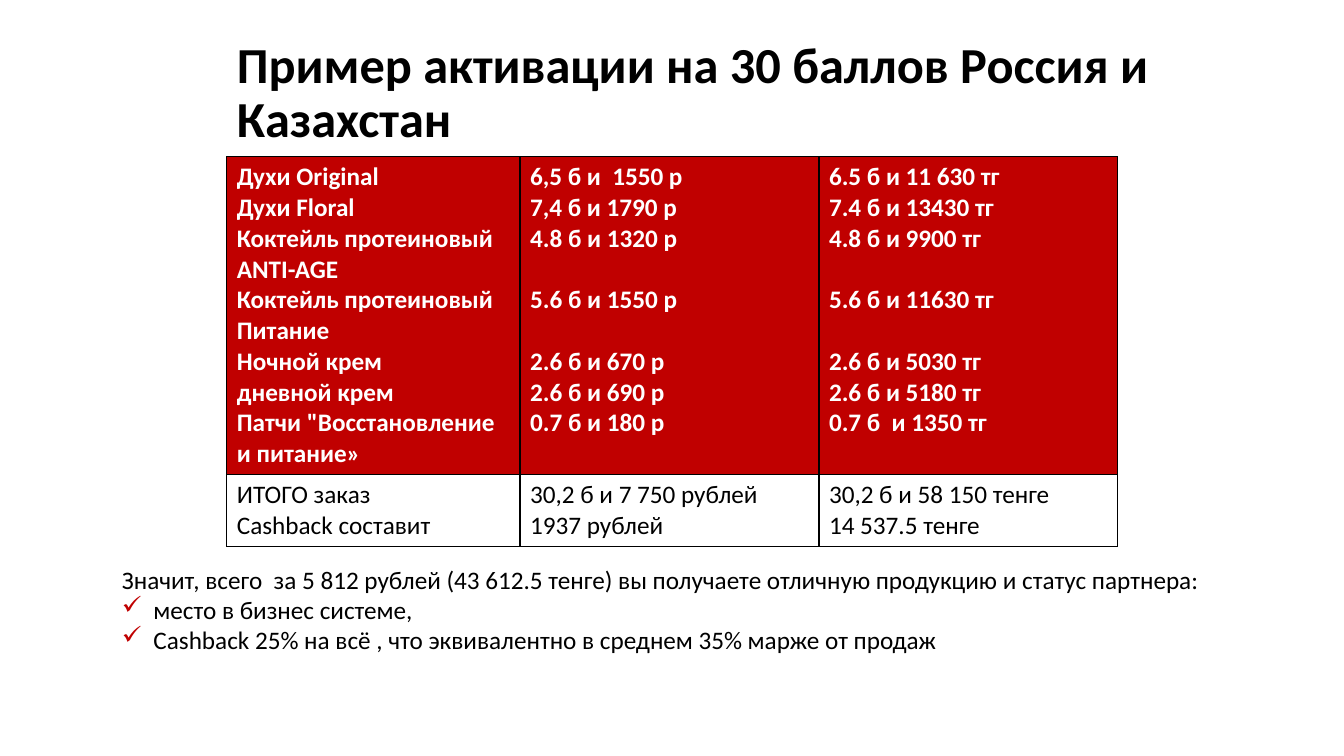
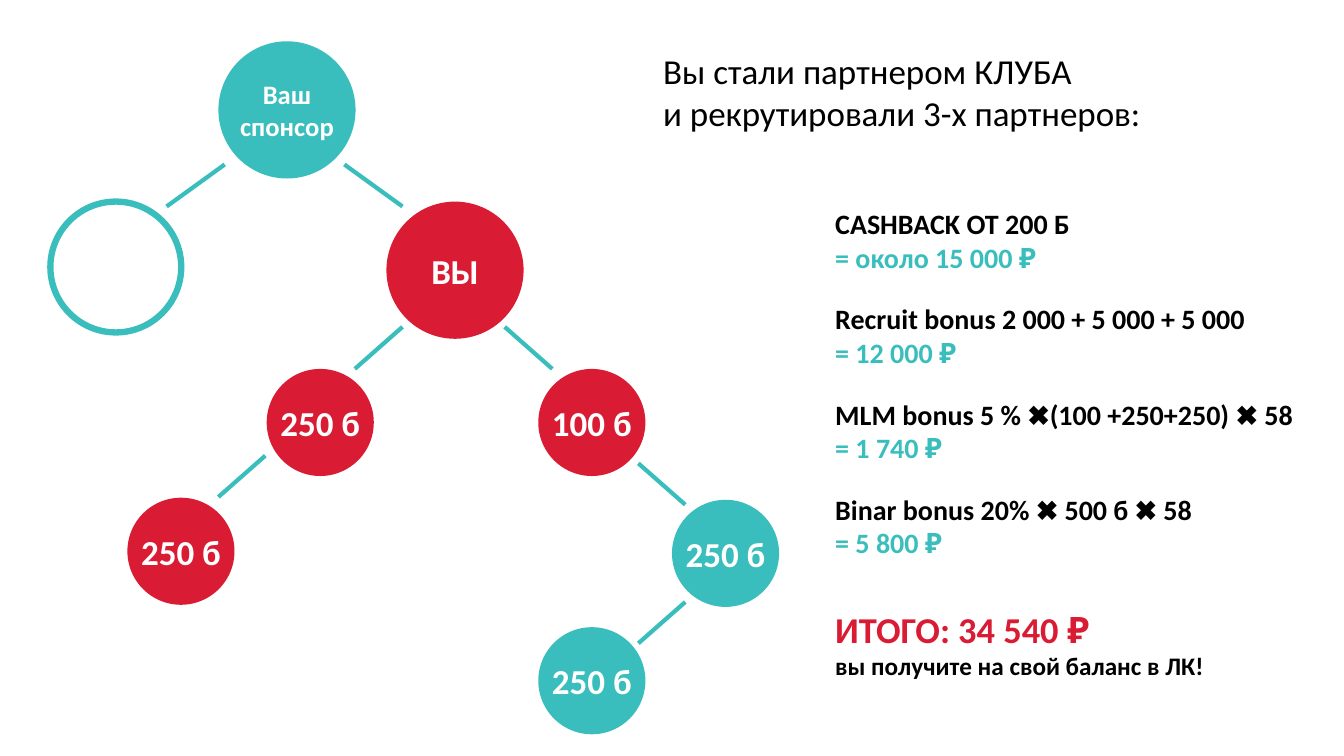
"""Build two slides: an activation example and a partner income tree."""
from itertools import groupby

from lxml.etree import SubElement
from pptx import Presentation
from pptx.dml.color import RGBColor
from pptx.enum.shapes import MSO_CONNECTOR, MSO_SHAPE
from pptx.enum.text import MSO_ANCHOR, MSO_AUTO_SIZE, PP_ALIGN
from pptx.oxml import parse_xml
from pptx.oxml.ns import nsdecls, qn
from pptx.util import Pt

BLACK = RGBColor(0x00, 0x00, 0x00)
WHITE = RGBColor(0xFF, 0xFF, 0xFF)
DARK_RED = RGBColor(0xC0, 0x00, 0x00)
RED = RGBColor(0xD9, 0x1C, 0x34)
TEAL = RGBColor(0x39, 0xBE, 0xBD)
FONT = "Calibri"
TITLE_ONLY = 5


def write(frame, text, *, size=18, color=BLACK, bold=False,
          alignment=PP_ALIGN.LEFT, space_before=0, line_spacing=1.0):
    """Add a paragraph, keeping multiplication marks regular."""
    paragraph = frame.paragraphs[0]
    if paragraph.runs:
        paragraph = frame.add_paragraph()
    paragraph.alignment = alignment
    paragraph.space_before = Pt(space_before)
    paragraph.line_spacing = line_spacing
    for mark, letters in groupby(text, lambda letter: letter if letter in "✖\n" else ""):
        if mark == "\n":
            paragraph.add_line_break()
            continue
        run = paragraph.add_run()
        run.text = "".join(letters)
        run.font.name = FONT
        run.font.size = Pt(size)
        run.font.bold = bold and not mark
        run.font.color.rgb = color
    return paragraph


def place_frame(slide, left, top, width, height, *, title=False, anchor=MSO_ANCHOR.TOP):
    """Return the wrapped text frame of a placed title or text box."""
    box = [Pt(length) for length in (left, top, width, height)]
    if title:
        shape = slide.shapes.title
        shape.left, shape.top, shape.width, shape.height = box
    else:
        shape = slide.shapes.add_textbox(*box)
    frame = shape.text_frame
    frame.word_wrap = True
    frame.auto_size = MSO_AUTO_SIZE.NONE
    frame.vertical_anchor = anchor
    return frame


presentation = Presentation()
presentation.slide_width = Pt(960)
presentation.slide_height = Pt(540)
layout = presentation.slide_layouts[TITLE_ONLY]

slide = presentation.slides.add_slide(layout)
title = place_frame(slide, 162, 15, 685, 104.5, title=True, anchor=MSO_ANCHOR.MIDDLE)
write(title, "Пример активации на 30 баллов Россия и Казахстан",
      size=36, bold=True, line_spacing=0.9)

products = ["Духи Original", "Духи Floral", "Коктейль протеиновый ANTI-AGE",
            "Коктейль протеиновый Питание", "Ночной крем", "дневной крем",
            "Патчи \"Восстановление и питание»"]
rouble_prices = ["6,5 б и  1550 р", "7,4 б и 1790 р", "4.8 б и 1320 р", "5.6 б и 1550 р",
                 "2.6 б и 670 р", "2.6 б и 690 р", "0.7 б и 180 р"]
tenge_prices = ["6.5 б и 11 630 тг", "7.4 б и 13430 тг", "4.8 б и 9900 тг", "5.6 б и 11630 тг",
                "2.6 б и 5030 тг", "2.6 б и 5180 тг", "0.7 б  и 1350 тг"]
table_rows = [
    [products, rouble_prices, tenge_prices],
    [["ИТОГО заказ", "Cashback составит"],
     ["30,2 б и 7 750 рублей", "1937 рублей"],
     ["30,2 б и 58 150 тенге", "14 537.5 тенге"]],
]
row_styles = [(227, DARK_RED, WHITE, True), (51.5, WHITE, BLACK, False)]
column_widths = [209.5, 213.5, 213.5]
after_two_line_product = (3, 4)

table = slide.shapes.add_table(2, 3, Pt(162), Pt(112), Pt(sum(column_widths)), Pt(278.5)).table
table.first_row = False
table.horz_banding = False
for column, width in zip(table.columns, column_widths):
    column.width = Pt(width)
for row_index, (height, fill, color, bold) in enumerate(row_styles):
    table.rows[row_index].height = Pt(height)
    for column_index, lines in enumerate(table_rows[row_index]):
        cell = table.cell(row_index, column_index)
        cell.fill.solid()
        cell.fill.fore_color.rgb = fill
        for line_index, line in enumerate(lines):
            skip_line = column_index > 0 and line_index in after_two_line_product
            write(cell.text_frame, line, color=color, bold=bold,
                  space_before=22 if skip_line else 0)
        properties = cell._tc.get_or_add_tcPr()
        for position, side in enumerate(("lnL", "lnR", "lnT", "lnB")):
            properties.insert(position, parse_xml(
                f'<a:{side} {nsdecls("a")} w="{Pt(1)}"><a:solidFill>'
                f'<a:srgbClr val="{BLACK}"/></a:solidFill></a:{side}>'))

summary = place_frame(slide, 80, 399.5, 818, 73)
write(summary, "Значит, всего  за 5 812 рублей (43 612.5 тенге) вы получаете "
               "отличную продукцию и статус партнера:")
for benefit in ("место в бизнес системе,",
                "Cashback 25% на всё , что эквивалентно в среднем 35% марже от продаж"):
    properties = write(summary, benefit)._p.get_or_add_pPr()
    properties.set("marL", str(Pt(22.5)))
    properties.set("indent", str(Pt(-22.5)))
    bullet_color = SubElement(properties, qn("a:buClr"))
    SubElement(bullet_color, qn("a:srgbClr"), val=str(DARK_RED))
    SubElement(properties, qn("a:buChar"), char="✓")

slide = presentation.slides.add_slide(layout)
title = place_frame(slide, 466.5, 31.7, 390, 68, title=True)
write(title, "Вы стали партнером КЛУБА\nи рекрутировали 3-х партнеров:", size=25)

LARGE, SMALL = 98, 76.5
partners = [
    (156, 29.5, LARGE, TEAL, "Ваш\nспонсор", 19),
    (36, 144, 93.5, WHITE, "", 25),
    (276, 144, LARGE, RED, "ВЫ", 25),
    (190.5, 263.5, SMALL, RED, "250 б", 25),
    (384.5, 263.5, SMALL, RED, "100 б", 25),
    (91, 355.5, SMALL, RED, "250 б", 25),
    (480, 357, SMALL, TEAL, "250 б", 25),
    (384.5, 448, SMALL, TEAL, "250 б", 25),
]
for left, top, diameter, fill, label, size in partners:
    circle = slide.shapes.add_shape(MSO_SHAPE.OVAL, Pt(left), Pt(top), Pt(diameter), Pt(diameter))
    circle.shadow.inherit = False
    circle.fill.solid()
    circle.fill.fore_color.rgb = fill
    if label:
        circle.line.fill.background()
        circle.text_frame.word_wrap = False
        circle.text_frame.vertical_anchor = MSO_ANCHOR.MIDDLE
        write(circle.text_frame, label, size=size, color=WHITE, bold=True,
              alignment=PP_ALIGN.CENTER)
    else:
        circle.line.color.rgb = TEAL
        circle.line.width = Pt(4.5)

links = [
    (119, 147.5, 160.5, 117.5), (287.5, 147.5, 246, 117.5),
    (253.5, 263.5, 287.5, 233.5), (394.5, 263.5, 360.5, 233.5),
    (156, 355, 189.5, 325.5), (489.5, 360.5, 456, 331),
    (456, 459.5, 489.5, 430),
]
for ends in links:
    link = slide.shapes.add_connector(MSO_CONNECTOR.STRAIGHT, *[Pt(length) for length in ends])
    link.line.color.rgb = TEAL
    link.line.width = Pt(3)
    SubElement(link._element.spPr, qn("a:effectLst"))

bonuses = [
    ("CASHBACK ОТ 200 Б", "= около 15 000 ₽"),
    ("Recruit bonus 2 000 + 5 000 + 5 000", "= 12 000 ₽"),
    ("MLM bonus 5 % ✖(100 +250+250) ✖ 58", "= 1 740 ₽"),
    ("Binar bonus 20% ✖ 500 б ✖ 58", "= 5 800 ₽"),
]
income = place_frame(slide, 589.5, 144, 358.5, 262)
for index, (formula, result) in enumerate(bonuses):
    write(income, formula, size=20, bold=True, space_before=20 if index else 0)
    write(income, result, size=20, color=TEAL, bold=True)

total = place_frame(slide, 589.5, 430, 312.5, 60.5)
write(total, "ИТОГО: 34 540 ₽", size=26, color=RED, bold=True)
write(total, "вы получите на свой баланс в ЛК!", bold=True)

presentation.save("out.pptx")
